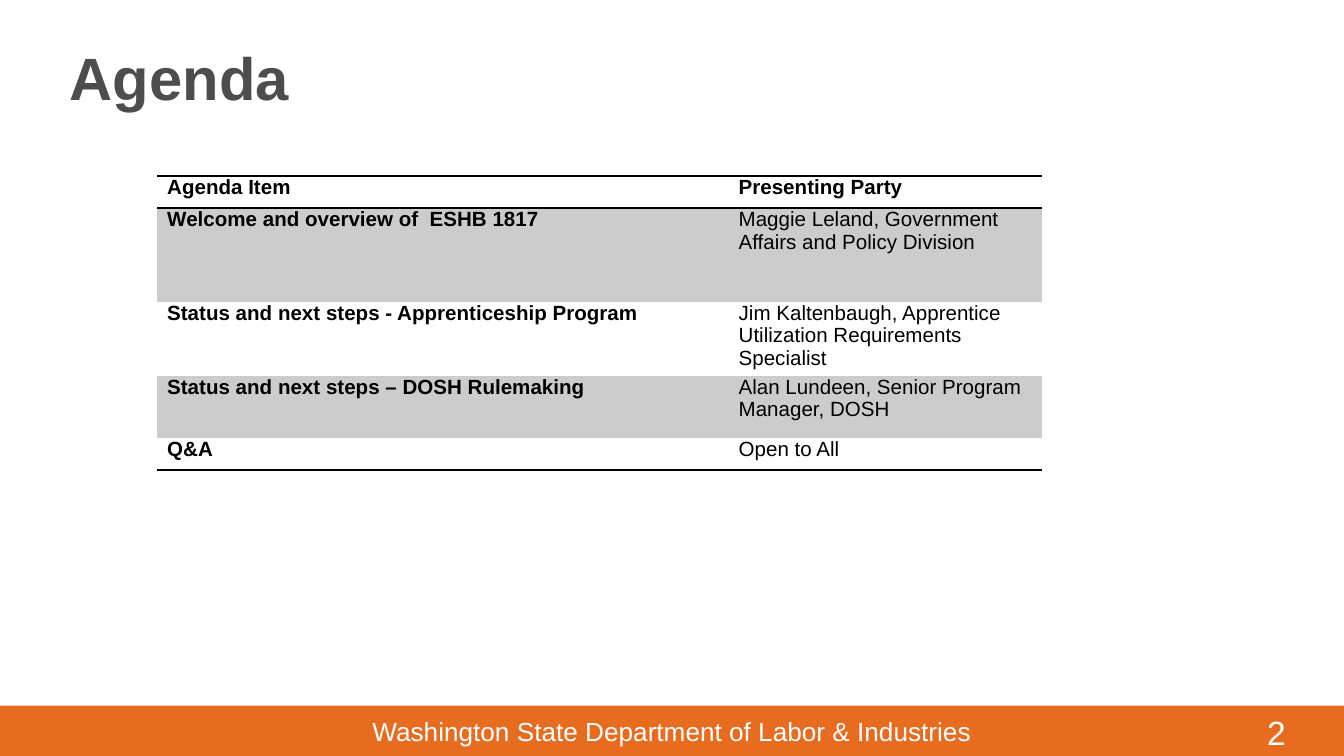
from lxml.etree import SubElement
from pptx import Presentation
from pptx.dml.color import RGBColor
from pptx.enum.shapes import MSO_SHAPE
from pptx.enum.text import MSO_ANCHOR, PP_ALIGN
from pptx.oxml import parse_xml
from pptx.oxml.ns import nsdecls, qn
from pptx.util import Cm, Pt


def rgb(color):
    return RGBColor.from_string(color)


def write(tf, text, size=11, color="000000", bold=False, align=PP_ALIGN.LEFT):
    tf.word_wrap = True
    p = tf.paragraphs[0]
    p.alignment = align
    r = p.add_run()
    r.text = text
    r.font.name = "Arial"
    r.font.size = Pt(size)
    r.font.bold = bold
    r.font.color.rgb = rgb(color)


prs = Presentation()
prs.slide_width = Cm(25.4)
prs.slide_height = Cm(14.29)
s = prs.slides.add_slide(prs.slide_layouts[6])

bar = s.shapes.add_shape(MSO_SHAPE.RECTANGLE, 0, Cm(13.34), prs.slide_width, Cm(0.95))
bar.shadow.inherit = False
bar.fill.solid()
bar.fill.fore_color.rgb = rgb("E86C1F")
bar.line.fill.background()

number = s.shapes.add_textbox(Cm(23.7), Cm(13.34), Cm(1.47), Cm(0.95))
write(number.text_frame, "2", size=18, color="FFFFFF")

footer = s.shapes.add_textbox(0, Cm(13.4), prs.slide_width, Cm(0.8))
write(footer.text_frame, "Washington State Department of Labor & Industries",
      size=14, color="FFFFFF", align=PP_ALIGN.CENTER)

title = s.shapes.add_textbox(Cm(1.07), Cm(0.79), Cm(23.29), Cm(1.32))
title.text_frame.vertical_anchor = MSO_ANCHOR.MIDDLE
write(title.text_frame, "Agenda", size=32, color="4D4D4D", bold=True)

agenda = [
    ("Agenda Item", "Presenting Party"),
    ("Welcome and overview of  ESHB 1817",
     "Maggie Leland, Government Affairs and Policy Division"),
    ("Status and next steps - Apprenticeship Program",
     "Jim Kaltenbaugh, Apprentice Utilization Requirements Specialist"),
    ("Status and next steps – DOSH Rulemaking",
     "Alan Lundeen, Senior Program Manager, DOSH"),
    ("Q&A", "Open to All"),
]
widths = [10.8, 5.92]
heights = [0.6, 1.77, 1.4, 1.18, 0.6]
borders = {0: ["lnT", "lnB"], 4: ["lnB"]}

frame = s.shapes.add_table(len(agenda), 2, Cm(2.97), Cm(3.33),
                           Cm(sum(widths)), Cm(sum(heights)))
table = frame.table
table.first_row = False
table.horz_banding = False
style = table._tbl.tblPr.find(qn("a:tableStyleId"))
style.text = "{2D5ABB26-0587-4C30-8999-92F81FD0307C}"
for col, width in zip(table.columns, widths):
    col.width = Cm(width)

for i, texts in enumerate(agenda):
    table.rows[i].height = Cm(heights[i])
    for j, text in enumerate(texts):
        cell = table.cell(i, j)
        cell.margin_left = cell.margin_right = Cm(0.19)
        cell.margin_top = cell.margin_bottom = 0
        write(cell.text_frame, text, bold=i == 0 or j == 0)
        tcPr = cell._tc.get_or_add_tcPr()
        for side in borders.get(i, []):
            ln = parse_xml(f'<a:{side} {nsdecls("a")} w="{Pt(1)}"/>')
            fill = SubElement(ln, qn("a:solidFill"))
            SubElement(fill, qn("a:srgbClr"), val="000000")
            tcPr.append(ln)
        if i % 2:
            cell.fill.solid()
            cell.fill.fore_color.rgb = rgb("CCCCCC")
        else:
            cell.fill.background()

prs.save("out.pptx")
